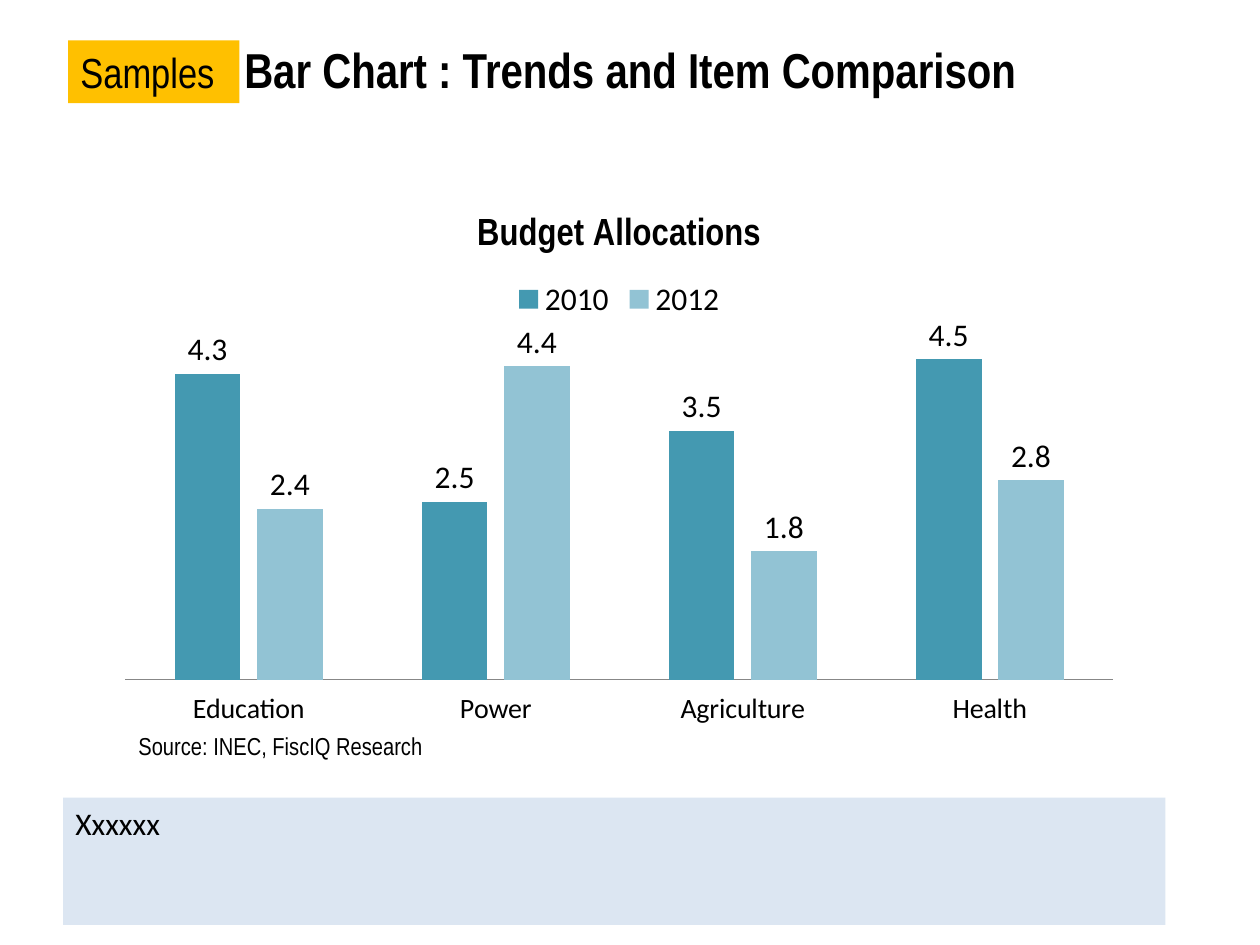
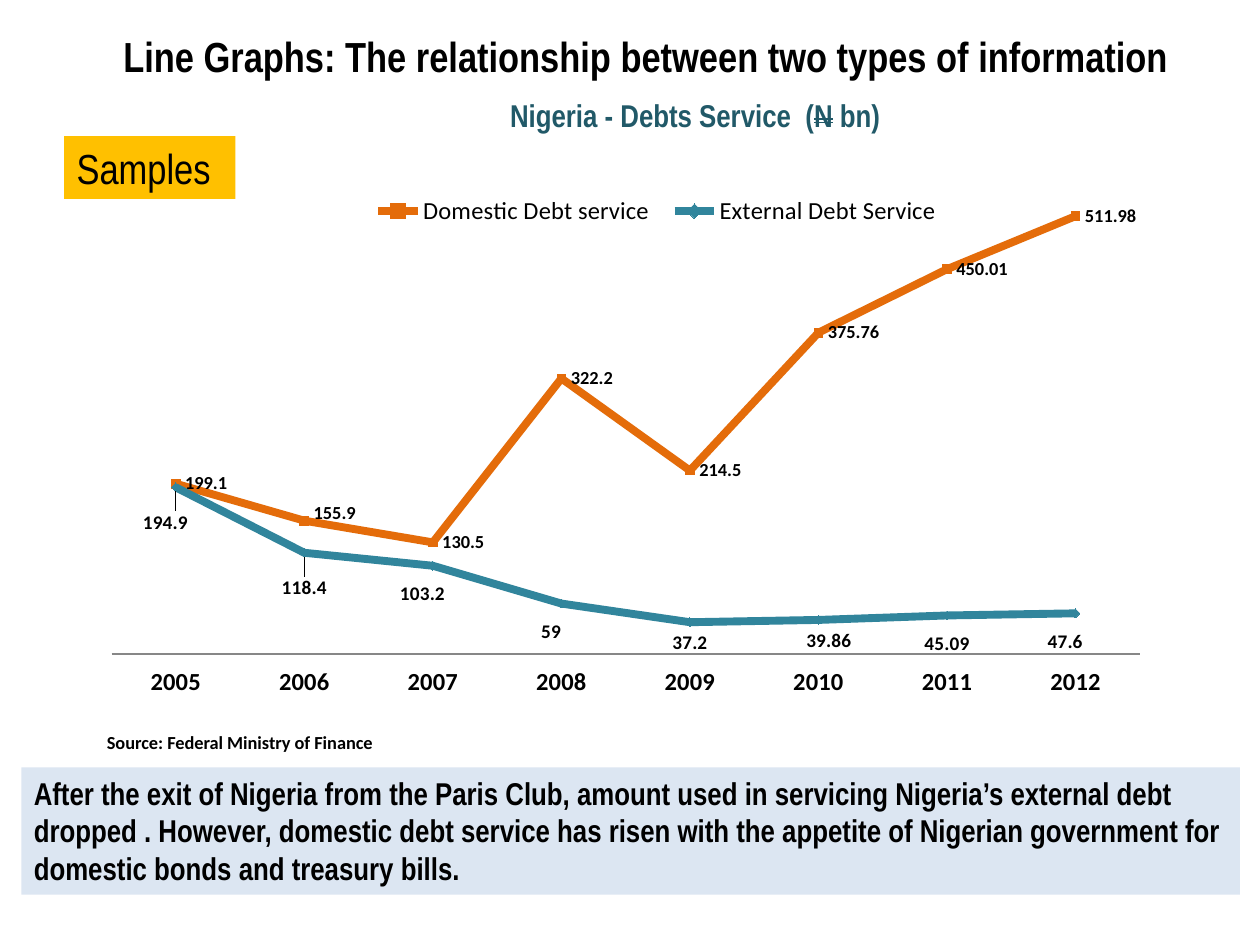
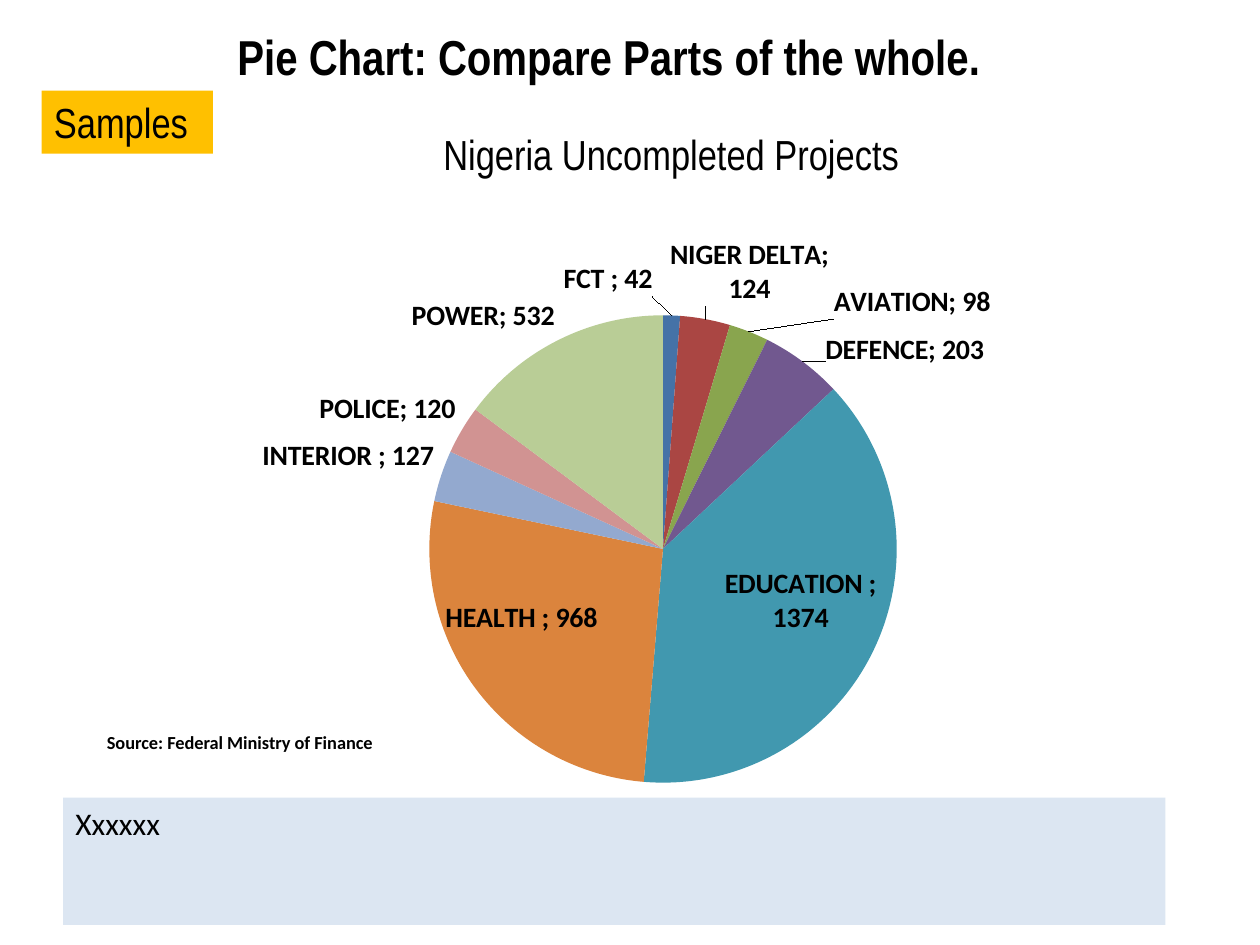
from lxml.etree import SubElement
from pptx import Presentation
from pptx.chart.data import CategoryChartData
from pptx.dml.color import RGBColor as RGB
from pptx.enum.chart import XL_CHART_TYPE as CT, XL_LABEL_POSITION as LP
from pptx.enum.chart import XL_LEGEND_POSITION as LG, XL_MARKER_STYLE as MK
from pptx.enum.chart import XL_TICK_LABEL_POSITION as TL, XL_TICK_MARK as TM
from pptx.enum.shapes import MSO_SHAPE as SHAPE
from pptx.enum.text import MSO_ANCHOR as ANCHOR, MSO_AUTO_SIZE as AUTO, PP_ALIGN as AL
from pptx.oxml.ns import qn
from pptx.util import Inches, Pt

C = {
    "black": "000000", "axis": "878787", "badge": "FFC000", "note": "DCE6F2",
    "heading": "215968", "year_2010": "4499B1", "year_2012": "92C3D4",
    "domestic": "E46C0A", "external": "31859C",
}
PIE = ["4572A7", "AA4643", "89A54E", "71588F", "4198AF", "DB843D", "93A9CF", "D19392", "B9CD96"]
NARROW, PLAIN = "Arial Narrow", "Calibri"


def write(sp, *texts, size=18, font=NARROW, bold=False, color="black", align=AL.LEFT):
    p = sp.text_frame.paragraphs[0]
    p.alignment = align
    for text in texts:
        r = p.add_run()
        r.text = text
        r.font.size, r.font.name, r.font.bold = Pt(size), font, bold
        r.font.color.rgb = RGB.from_string(C[color])
    return p


def place(el, index, **sizes):
    for old in el.findall(qn("c:layout")):
        el.remove(old)
    layout = el.makeelement(qn("c:layout"))
    el.insert(index, layout)
    manual = SubElement(layout, qn("c:manualLayout"))
    for tag, val in sizes.items():
        SubElement(manual, qn("c:" + tag)).set("val", str(val))


prs = Presentation()
prs.slide_width, prs.slide_height = Inches(10), Inches(7.5)

source = ("Source: Federal Ministry of Finance", (0.75, 5.75, 2.67, 0.28),
          dict(size=10.5, font=PLAIN, bold=True))
debt_note = ("After the exit of Nigeria from the Paris Club, amount used in servicing Nigeria’s "
             "external debt dropped . However, domestic debt service has risen with the appetite "
             "of Nigerian government for domestic bonds and treasury bills.")
blank_note = ("Xxxxxx", (0.5, 6.33, 8.75, 1.01), dict(font=PLAIN))

pages = [
    dict(title="Bar Chart : Trends and Item Comparison", title_box=(0.5, -0.08, 9, 1.25),
         title_size=28, badge=(0.54, 0.32), note=blank_note,
         texts=[("Source: INEC, FiscIQ Research", (1, 5.75, 2.62, 0.34), dict(size=14))],
         kind=CT.COLUMN_CLUSTERED, chart_box=(0.83, 1.5, 8.17, 4.28),
         plot=(0.02, 0.25, 0.96, 0.66), cats=["Education", "Power", "Agriculture", "Health"],
         series={"2010": [4.3, 2.5, 3.5, 4.5], "2012": [2.4, 4.4, 1.8, 2.8]}),
    dict(title="Line Graphs: The relationship between two types of information",
         title_box=(-0.25, -0.08, 10.75, 1.04), title_size=24, badge=(0.51, 1.08),
         note=(debt_note, (0.17, 6.09, 9.67, 1.01), dict(bold=True)), texts=[source],
         kind=CT.LINE_MARKERS, chart_box=(0.88, 0.17, 8.25, 5.58),
         plot=(0, 0.17, 0.99, 0.73), cats=[str(year) for year in range(2005, 2013)],
         series={"Domestic Debt service": [199.1, 155.9, 130.5, 322.2, 214.5, 375.76, 450.01, 511.98],
                 "External Debt Service": [194.9, 118.4, 103.2, 59, 37.2, 39.86, 45.09, 47.6]}),
    dict(title="Pie Chart: Compare Parts of the whole.", title_box=(-0.38, -0.08, 10.42, 1.04),
         title_size=28, badge=(0.33, 0.72), note=blank_note,
         texts=[source, ("Nigeria Uncompleted Projects", (3.42, 0.97, 3.86, 0.5), dict(size=24))],
         kind=CT.PIE, chart_box=(1.42, 1.77, 7.25, 4.58), plot=(0.27, 0.16, 0.52, 0.81),
         cats=["FCT ", "NIGER DELTA", "AVIATION", "DEFENCE", "EDUCATION ", "HEALTH ",
               "INTERIOR ", "POLICE", "POWER"],
         series={"Series 1": [42, 124, 98, 203, 1374, 968, 127, 120, 532]}),
]

charts = []
for page in pages:
    s = prs.slides.add_slide(prs.slide_layouts[5])
    title = s.shapes.title
    title.left, title.top, title.width, title.height = map(Inches, page["title_box"])
    write(title, page["title"], size=page["title_size"], bold=True, align=AL.CENTER)
    title.text_frame.auto_size = AUTO.NONE
    title.text_frame.vertical_anchor = ANCHOR.MIDDLE

    data = CategoryChartData()
    data.categories = page["cats"]
    for name, values in page["series"].items():
        data.add_series(name, values)
    frame = s.shapes.add_chart(page["kind"], *map(Inches, page["chart_box"]), data)
    chart = frame.chart
    chart.font.size, chart.font.name = Pt(18), PLAIN
    chart.font.color.rgb = RGB.from_string(C["black"])
    chart.has_title = chart.has_legend = page["kind"] != CT.PIE
    x, y, w, h = page["plot"]
    place(chart.plots[0]._element.getparent(), 0, layoutTarget="inner",
          xMode="edge", yMode="edge", x=x, y=y, w=w, h=h)
    charts.append(chart)

    for text, box, style in page["texts"]:
        sp = s.shapes.add_textbox(*map(Inches, box))
        write(sp, text, **style)
    note_text, note_box, note_style = page["note"]
    badge = ("Samples", (*page["badge"], 1.36, 0.5), dict(size=24))
    for text, box, style, fill in [(note_text, note_box, note_style, "note"), (*badge, "badge")]:
        sp = s.shapes.add_shape(SHAPE.RECTANGLE, *map(Inches, box))
        sp.shadow.inherit = False
        sp.fill.solid()
        sp.fill.fore_color.rgb = RGB.from_string(C[fill])
        sp.line.fill.background()
        sp.text_frame.vertical_anchor = ANCHOR.TOP
        sp.text_frame.word_wrap = fill == "note"
        write(sp, text, **style)

budget, debt, projects = charts

for chart, top, label_size, bold in [(budget, 5, 16, False), (debt, 600, 14, True)]:
    chart.plots[0].vary_by_categories = False
    chart.legend.position = LG.TOP
    chart.legend.include_in_layout = False
    val, cat = chart.value_axis, chart.category_axis
    val.visible = val.has_major_gridlines = False
    val.minimum_scale, val.maximum_scale = 0, top
    cat.major_tick_mark = TM.NONE
    cat.tick_label_position = TL.LOW
    cat.tick_labels.font.size, cat.tick_labels.font.bold = Pt(label_size), bold
    cat.format.line.color.rgb = RGB.from_string(C["axis"])

write(budget.chart_title, "Budget Allocations", size=21.6, bold=True, align=AL.CENTER)
budget.plots[0].gap_width, budget.plots[0].overlap = 150, -25
for ser, color in zip(budget.plots[0].series, ["year_2010", "year_2012"]):
    ser.format.fill.solid()
    ser.format.fill.fore_color.rgb = RGB.from_string(C[color])
    ser.data_labels.show_value = True
    ser.data_labels.position = LP.OUTSIDE_END

p = write(debt.chart_title, "Nigeria - Debts Service  (", "N", " bn)", bold=True,
          color="heading", align=AL.CENTER)
p.runs[1].font._element.set("strike", "dblStrike")
place(debt.chart_title._element, 1, xMode="edge", yMode="edge", x=0.38, y=0.11)
debt.legend.font.size = Pt(14)
place(debt.legend._element, 1, xMode="edge", yMode="edge", x=0.24, y=0.23, w=0.57, h=0.08)
line_styles = [("domestic", MK.SQUARE, LP.RIGHT, 10.5), ("external", MK.DIAMOND, LP.BELOW, 11)]
for ser, (color, marker, position, size) in zip(debt.plots[0].series, line_styles):
    rgb = RGB.from_string(C[color])
    ser.smooth = False
    ser.format.line.color.rgb, ser.format.line.width = rgb, Pt(4.5)
    ser.marker.style, ser.marker.size = marker, 5
    ser.marker.format.fill.solid()
    ser.marker.format.fill.fore_color.rgb = rgb
    ser.marker.format.line.color.rgb = rgb
    labels = ser.data_labels
    labels.show_value, labels.position = True, position
    labels.font.size, labels.font.bold = Pt(size), True

slices = projects.plots[0].series[0]
projects.plots[0].vary_by_categories = True
for i, color in enumerate(PIE):
    fill = slices.points[i].format.fill
    fill.solid()
    fill.fore_color.rgb = RGB.from_string(color)
labels = slices.data_labels
labels.show_value = labels.show_category_name = True
labels.position = LP.OUTSIDE_END
labels.font.size, labels.font.bold = Pt(16), True

domestic, external = debt.plots[0].series
external_shifts = [(-0.01, 0.02), (0, 0.02), (-0.01, 0.01), (-0.01, 0.01),
                   (0, 0), (0.01, 0), (0, 0.01), (-0.01, 0.01)]
slice_shifts = [(-0.07, -0.02), (-0.04, -0.01), (0.09, -0.01), (0.02, 0.02),
                (-0.17, -0.15), (0.14, -0.16)]
moved_labels = [
    (domestic, {1: (0, -0.01)}, LP.RIGHT, 10.5),
    (external, dict(enumerate(external_shifts)), LP.BELOW, 11),
    (slices, dict(enumerate(slice_shifts)), LP.OUTSIDE_END, 16),
]
for ser, shifts, position, size in moved_labels:
    for i, (x, y) in shifts.items():
        label = ser.points[i].data_label
        label.position = position
        label.font.size, label.font.bold = Pt(size), True
        dLbl = next(el for el in ser.data_labels._element.findall(qn("c:dLbl"))
                    if el.find(qn("c:idx")).get("val") == str(i))
        place(dLbl, 1, x=x, y=y)
        if ser is slices:
            dLbl.find(qn("c:showCatName")).set("val", "1")

for bubble in list(slices.data_labels._element.iter(qn("c:showBubbleSize"))):
    separator = bubble.makeelement(qn("c:separator"))
    separator.text = "; "
    bubble.addnext(separator)

prs.save("out.pptx")
